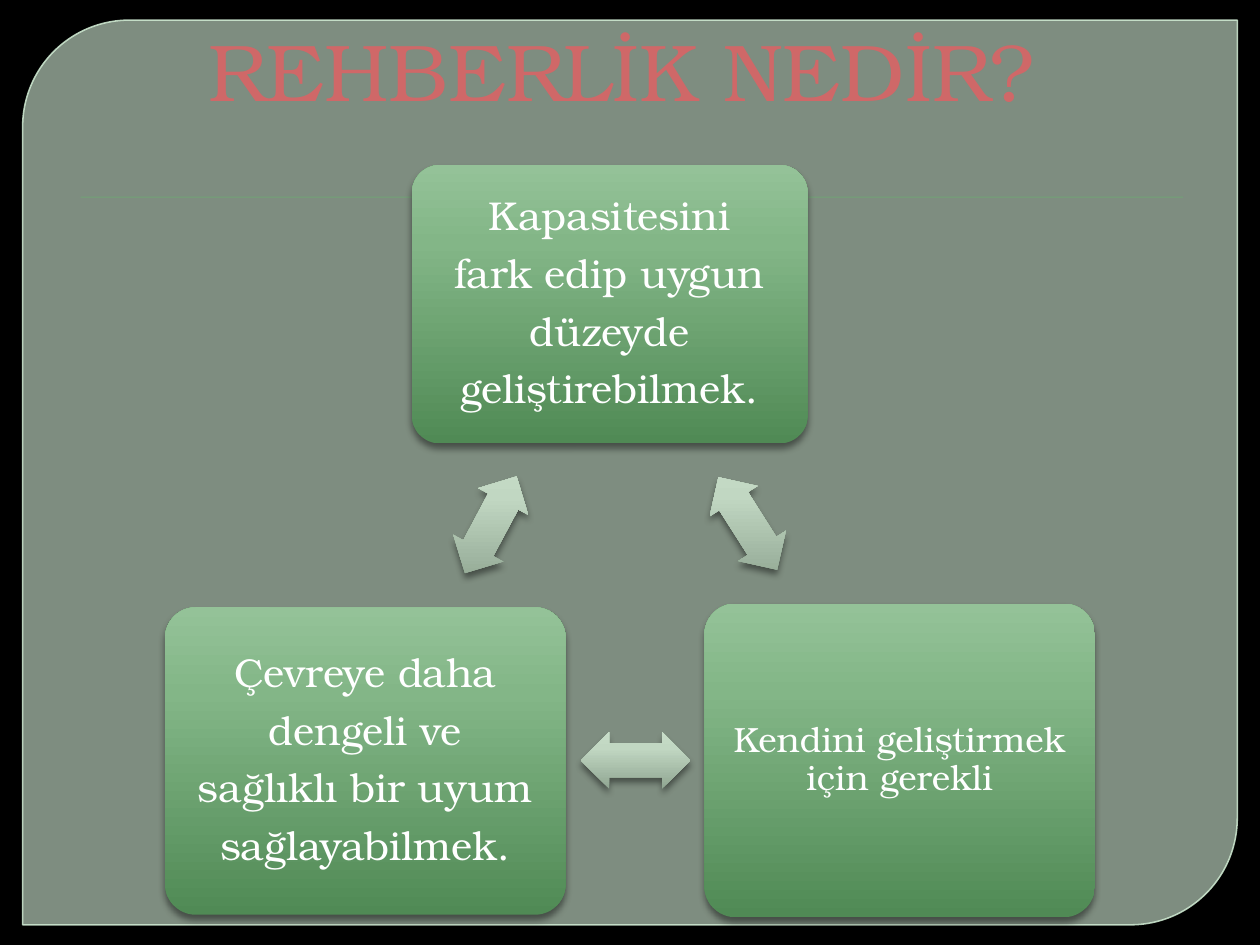
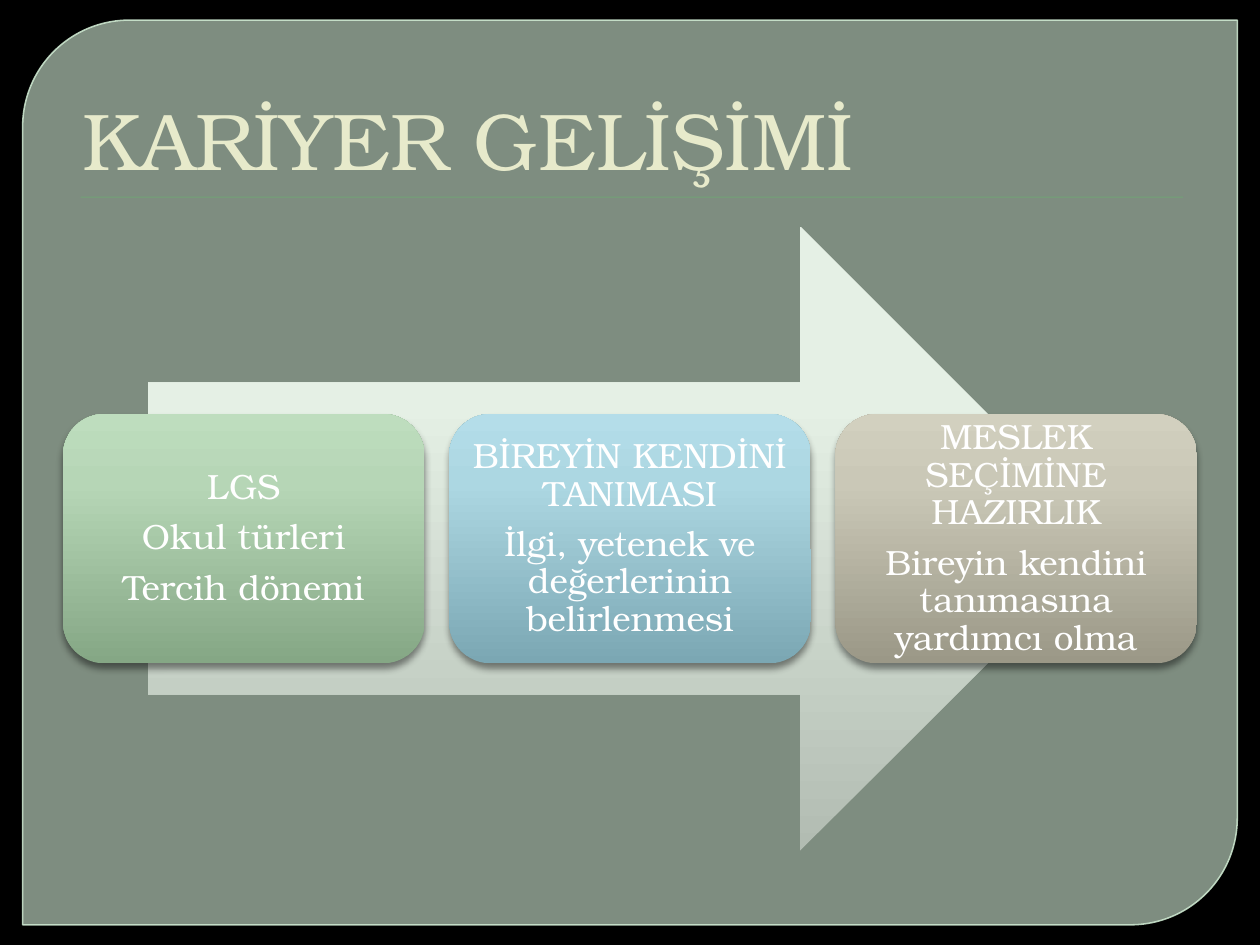
from copy import deepcopy
from dataclasses import dataclass

from lxml import etree
from pptx import Presentation
from pptx.dml.color import RGBColor
from pptx.enum.shapes import MSO_SHAPE
from pptx.enum.text import MSO_ANCHOR, PP_ALIGN
from pptx.oxml.ns import qn
from pptx.util import Inches, Pt

PANEL = MSO_SHAPE.ROUND_2_DIAG_RECTANGLE
RECTANGLE = MSO_SHAPE.RECTANGLE
ROUNDED = MSO_SHAPE.ROUNDED_RECTANGLE
DOUBLE_ARROW = MSO_SHAPE.LEFT_RIGHT_ARROW
RIGHT_ARROW = MSO_SHAPE.RIGHT_ARROW
MIDDLE, BOTTOM = MSO_ANCHOR.MIDDLE, MSO_ANCHOR.BOTTOM
LEFT, CENTER = PP_ALIGN.LEFT, PP_ALIGN.CENTER


@dataclass(frozen=True)
class Theme:
    font: str = "TeX Gyre Bonum"
    title_size: int = 46
    large_size: int = 23
    body_size: int = 20
    background: str = "000000"
    panel: str = "C3DAC5"
    panel_edge: str = "CEE9D1"
    rule: str = "72A376"
    title: str = "E7EACB"
    title_accent: str = "CF6868"
    card_text: str = "FFFFFF"
    shadow: str = "000000"
    stops: tuple = (0, 0.72, 1)
    card: tuple = ("508A55", "83B687", "94C298")
    link: tuple = ("90A692", "C1D7C2", "C8DDC9")
    big_arrow: tuple = ("B2BCB2", "E5F0E5", "E8F2E8")
    green: tuple = ("85A785", "B6D6B6", "BEDDBE")
    blue: tuple = ("7BA7B3", "ACD7E2", "B4DDE9")
    sand: tuple = ("9B9887", "CAC8B7", "D2D0BF")


THEME = Theme()


def color(value):
    return RGBColor.from_string(value)


def set_alpha(parent, percent):
    for tone in parent.iter(qn("a:srgbClr")):
        etree.SubElement(tone, qn("a:alpha")).set("val", str(percent * 1000))


def add_plain_shape(page, kind, box, adjustments=()):
    shape = page.shapes.add_shape(kind, *(Inches(length) for length in box))
    shape.shadow.inherit = False
    shape.line.fill.background()
    for index, value in enumerate(adjustments):
        shape.adjustments[index] = value
    return shape


def add_shadow(shape, opacity=43, blur=4, distance=3):
    effects = shape._element.spPr.find(qn("a:effectLst"))
    shadow = etree.SubElement(effects, qn("a:outerShdw"), blurRad=str(Pt(blur)),
                              dist=str(Pt(distance)), dir="5400000", rotWithShape="0")
    etree.SubElement(shadow, qn("a:srgbClr")).set("val", THEME.shadow)
    set_alpha(shadow, opacity)


def fill_gradient(shape, tones):
    shape.fill.gradient()
    shape.fill.gradient_angle = 90
    gradient = shape._element.spPr.find(qn("a:gradFill"))
    gradient.set("rotWithShape", "0")
    stop_list = gradient.find(qn("a:gsLst"))
    stop_list.append(deepcopy(stop_list[-1]))
    for stop, position, tone in zip(shape.fill.gradient_stops, THEME.stops, tones):
        stop.position = position
        stop.color.rgb = color(tone)


def write_text(frame, lines, size, tone, anchor, align):
    frame.word_wrap = True
    frame.vertical_anchor = anchor
    frame.text = "\n".join(lines)
    for para in frame.paragraphs:
        para.alignment = align
        for span in para.runs:
            span.font.name = THEME.font
            span.font.size = Pt(size)
            span.font.color.rgb = color(tone)


def add_card(page, box, lines, size, tones, inset, corner):
    card = add_plain_shape(page, ROUNDED, box, [corner])
    fill_gradient(card, tones)
    add_shadow(card)
    frame = card.text_frame
    frame.margin_left = frame.margin_right = Inches(inset)
    frame.margin_top = frame.margin_bottom = Inches(inset)
    write_text(frame, lines, size, THEME.card_text, MIDDLE, CENTER)
    for para in frame.paragraphs:
        para.line_spacing = 0.9
        para.space_after = Pt(0.35 * size)


def add_title(page, box, text, tone, align):
    title = page.shapes.add_textbox(*(Inches(length) for length in box))
    write_text(title.text_frame, [text], THEME.title_size, tone, BOTTOM, align)
    properties = title.text_frame.paragraphs[0]._p.get_or_add_pPr()
    properties.set("marL", str(Inches(0.06)))


def add_page(deck):
    page = deck.slides.add_slide(deck.slide_layouts[6])
    page.background.fill.solid()
    page.background.fill.fore_color.rgb = color(THEME.background)

    panel = add_plain_shape(page, PANEL, (0.18, 0.16, 9.64, 7.18), [0.118, 0])
    panel.fill.solid()
    panel.fill.fore_color.rgb = color(THEME.panel)
    set_alpha(panel._element.spPr.find(qn("a:solidFill")), 65)
    panel.line.color.rgb = color(THEME.panel_edge)
    panel.line.width = Pt(0.87)
    set_alpha(panel._element.spPr.find(qn("a:ln")), 88)

    rule = add_plain_shape(page, RECTANGLE, (0.64, 1.56, 8.75, 0.01))
    rule.fill.solid()
    rule.fill.fore_color.rgb = color(THEME.rule)
    add_shadow(rule, opacity=75, blur=1, distance=1)
    return page


def add_guidance_cycle(page, box):
    left, top = box[:2]
    cards = [
        ((1.96, 0, 3.14, 2.21), THEME.large_size, 0.1,
         ["Kapasitesini", "fark edip uygun", "düzeyde", "geliştirebilmek."]),
        ((4.28, 3.48, 3.1, 2.49), THEME.body_size, 0.08,
         ["Kendini geliştirmek için gerekli"]),
        ((0, 3.51, 3.18, 2.44), THEME.large_size, 0.1,
         ["Çevreye daha", "dengeli ve", "sağlıklı bir uyum", "sağlayabilmek."]),
    ]
    for (x, y, width, height), size, inset, lines in cards:
        add_card(page, (left + x, top + y, width, height), lines, size,
                 THEME.card, inset, 0.1)
    for x, y, angle in [(4.19, 2.62, 57.6), (3.3, 4.5, 0), (2.15, 2.63, 298.1)]:
        link = add_plain_shape(page, DOUBLE_ARROW, (left + x, top + y, 0.87, 0.45),
                               [0.6, 0.5])
        link.rotation = angle
        fill_gradient(link, THEME.link)
        add_shadow(link)


def add_career_process(page, box):
    left, top, width, height = box
    arrow_width = 0.85 * width
    arrow = add_plain_shape(page, RIGHT_ARROW,
                            (left + (width - arrow_width) / 2, top, arrow_width, height))
    fill_gradient(arrow, THEME.big_arrow)

    stages = [
        (THEME.green, ["LGS", "Okul türleri", "Tercih dönemi"]),
        (THEME.blue, ["BİREYİN KENDİNİ TANIMASI",
                      "İlgi, yetenek ve değerlerinin belirlenmesi"]),
        (THEME.sand, ["MESLEK SEÇİMİNE HAZIRLIK",
                      "Bireyin kendini tanımasına yardımcı olma"]),
    ]
    card_width, card_height = 2.87, 0.4 * height
    step = (width - card_width) / (len(stages) - 1)
    for index, (tones, lines) in enumerate(stages):
        card_box = (left + index * step, top + 0.3 * height, card_width, card_height)
        add_card(page, card_box, lines, THEME.body_size, tones, 0.08, 0.1667)


def main():
    deck = Presentation()
    deck.slide_width, deck.slide_height = Inches(10), Inches(7.5)

    guidance = add_page(deck)
    add_title(guidance, (-0.2, -0.27, 10.2, 1.25), "REHBERLİK NEDİR?",
              THEME.title_accent, CENTER)
    add_guidance_cycle(guidance, (1.31, 1.31, 7.38, 5.97))

    career = add_page(deck)
    add_title(career, (0.5, 0.28, 9, 1.25), "KARİYER GELİŞİMİ", THEME.title, LEFT)
    add_career_process(career, (0.5, 1.8, 9, 4.95))

    deck.save("out.pptx")


if __name__ == "__main__":
    main()
